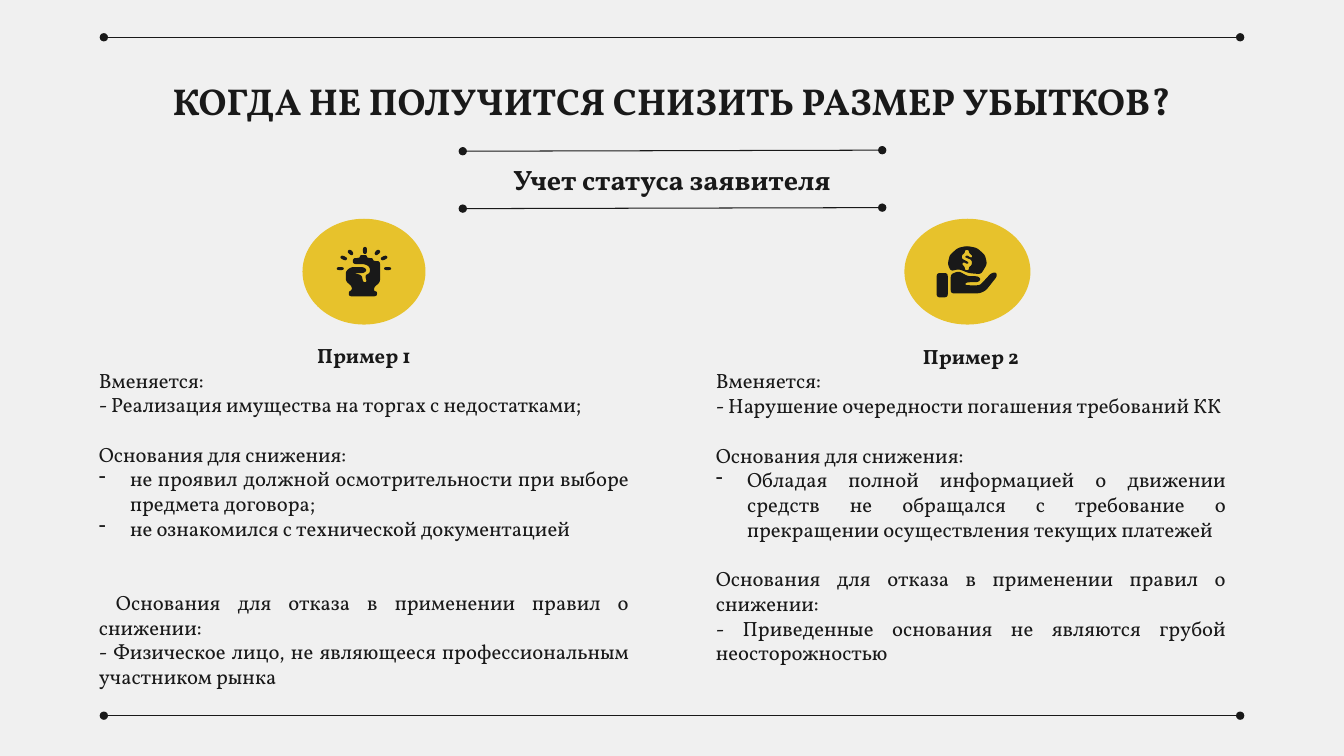
"""Build the slide on when damages cannot be reduced."""
import math
from dataclasses import dataclass

import pptx
import pptx.dml.color
import pptx.enum.shapes
import pptx.enum.text
import pptx.oxml.ns
import pptx.oxml.xmlchemy
import pptx.util

PX = 9144
ALIGN = pptx.enum.text.PP_ALIGN


@dataclass(frozen=True)
class Theme:
    paper: str = "F0F0F0"
    ink: str = "191919"
    accent: str = "E7C22C"
    font: str = "Vollkorn"
    title: float = 26.7
    heading: float = 20
    body: float = 14.7
    gap: float = 17.6
    rule: float = 0.75


def px(n):
    return pptx.util.Emu(round(n * PX))


def rgb(value):
    return pptx.dml.color.RGBColor.from_string(value)


def add_xml(parent, tag, **attrs):
    el = pptx.oxml.xmlchemy.OxmlElement(tag)
    for name, value in attrs.items():
        el.set(name, value)
    parent.append(el)


def write(p, text, theme, size, bold=False, align=ALIGN.JUSTIFY, gaps=0, first=0, bullet=False):
    p.alignment = align
    if gaps:
        p.space_before = pptx.util.Pt(gaps * theme.gap)
    pPr = p._p.get_or_add_pPr()
    if bullet:
        pPr.set("marL", str(px(31)))
        pPr.set("indent", str(px(-31)))
        add_xml(pPr, "a:buChar", char="-")
    elif first:
        pPr.set("indent", str(px(first)))
    r = p.add_run()
    r.text = text
    r.font.name, r.font.size, r.font.bold = theme.font, pptx.util.Pt(size), bold
    r.font.color.rgb = rgb(theme.ink)


def rounded(corners, radius):
    points = []
    for i, (x, y) in enumerate(corners):
        ends = []
        for nx, ny in (corners[i - 1], corners[(i + 1) % len(corners)]):
            length = math.hypot(nx - x, ny - y)
            t = min(radius / length, 0.5)
            ends.append((x + (nx - x) * t, y + (ny - y) * t))
        (ax, ay), (bx, by) = ends
        for t in (0, 0.25, 0.5, 0.75, 1):
            u = 1 - t
            points.append((u * u * ax + 2 * u * t * x + t * t * bx,
                           u * u * ay + 2 * u * t * y + t * t * by))
    return [(px(x), px(y)) for x, y in points]


class Deck:
    def __init__(self, theme):
        self.theme = theme
        self.prs = pptx.Presentation()
        self.prs.slide_width = pptx.util.Inches(13.33)
        self.prs.slide_height = pptx.util.Inches(7.5)
        self.s = self.prs.slides.add_slide(self.prs.slide_layouts[6])
        self.s.background.fill.solid()
        self.s.background.fill.fore_color.rgb = rgb(theme.paper)

    def text(self, x, y, w, h, paragraphs, inset=13, wrap=True):
        tf = self.s.shapes.add_textbox(px(x), px(y), px(w), px(h)).text_frame
        tf.word_wrap = wrap
        tf.margin_left = tf.margin_right = tf.margin_top = tf.margin_bottom = px(inset)
        for i, (text, style) in enumerate(paragraphs):
            p = tf.add_paragraph() if i else tf.paragraphs[0]
            write(p, text, self.theme, **{"size": self.theme.body, **style})

    def rule(self, x1, y1, x2, y2):
        c = self.s.shapes.add_connector(
            pptx.enum.shapes.MSO_CONNECTOR.STRAIGHT, px(x1), px(y1), px(x2), px(y2))
        c.line.color.rgb = rgb(self.theme.ink)
        c.line.width = pptx.util.Pt(self.theme.rule)
        spPr = c.element.spPr
        ln = spPr.find(pptx.oxml.ns.qn("a:ln"))
        for end in ("a:headEnd", "a:tailEnd"):
            add_xml(ln, end, type="oval")
        add_xml(spPr, "a:effectLst")

    def paint(self, sp, color):
        sp.shadow.inherit = False
        sp.fill.solid()
        sp.fill.fore_color.rgb = rgb(color)
        sp.line.fill.background()

    def disc(self, x, y, w, h):
        sp = self.s.shapes.add_shape(
            pptx.enum.shapes.MSO_SHAPE.OVAL, px(x), px(y), px(w), px(h))
        self.paint(sp, self.theme.accent)

    def outline(self, *contours, radius=3):
        builder = None
        for corners in contours:
            start, *rest = rounded(corners, radius)
            if builder is None:
                builder = self.s.shapes.build_freeform(*start, scale=1.0)
            else:
                builder.move_to(*start)
            builder.add_line_segments(rest, close=True)
        self.paint(builder.convert_to_shape(), self.theme.ink)


CUFF = [(929, 271), (940, 271), (940, 295), (929, 295)]
COIN = [(943, 269), (940, 262), (942, 253), (950, 246), (959, 244), (969, 246), (977, 253),
        (979, 262), (973, 272), (961, 271), (951, 267)]
DOLLAR = [(957, 248), (961, 248), (961, 251), (965, 254), (963, 256), (959, 253), (957, 255),
          (959, 256), (964, 258), (964, 263), (961, 265), (961, 268), (957, 268), (957, 265),
          (954, 262), (956, 260), (959, 262), (961, 261), (959, 259), (954, 257), (954, 253),
          (957, 251)]
PALM = [(943, 272), (951, 269), (960, 274), (970, 274), (973, 277), (970, 280), (959, 280),
        (957, 282), (959, 283), (972, 283), (983, 271), (988, 270), (989, 274), (978, 288),
        (972, 291), (943, 291)]
FIST = [(350, 262), (362, 262), (367, 265), (367, 271), (362, 273), (364, 280), (360, 280),
        (359, 273), (351, 271), (361, 271), (364, 268), (361, 265), (348, 265), (343, 269),
        (343, 279), (349, 284), (349, 288), (346, 289), (346, 294), (374, 294), (374, 289),
        (371, 289), (371, 285), (377, 280), (377, 259), (370, 259), (370, 256), (364, 256),
        (364, 253), (357, 253), (357, 256), (350, 256)]
TOP_RAY = [(360, 245), (364, 245), (364, 252), (360, 252)]
RIGHT_RAYS = [
    [(371, 251), (375, 247), (378, 250), (373, 254)],
    [(377, 256), (383, 253), (385, 256), (379, 259)],
    [(381, 265), (388, 265), (388, 268), (381, 268)],
]


def main():
    theme = Theme()
    deck = Deck(theme)
    head = {"bold": True, "align": ALIGN.CENTER}
    deck.text(105, 65, 1123, 102, [
        ("КОГДА НЕ ПОЛУЧИТСЯ СНИЗИТЬ РАЗМЕР УБЫТКОВ?", {**head, "size": theme.title})])
    deck.text(697, 328, 532, 363, [
        ("Пример 2", head),
        ("Вменяется:", {}),
        ("- Нарушение очередности погашения требований КК", {}),
        ("Основания для снижения:", {"gaps": 1}),
        ("Обладая полной информацией о движении средств не обращался с требование о "
         "прекращении осуществления текущих платежей", {"bullet": True}),
        ("Основания для отказа в применении правил о снижении:", {"gaps": 1}),
        ("- Приведенные основания не являются грубой неосторожностью", {}),
    ])
    deck.text(85, 327, 552, 366, [
        ("Пример 1", head),
        ("Вменяется:", {}),
        ("- Реализация имущества на торгах с недостатками;", {}),
        ("Основания для снижения:", {"gaps": 1}),
        ("не проявил должной осмотрительности при выборе предмета договора;", {"bullet": True}),
        ("не ознакомился с технической документацией", {"bullet": True}),
        ("Основания для отказа в применении правил о снижении:", {"gaps": 2, "first": 17}),
        ("- Физическое лицо, не являющееся профессиональным участником рынка", {}),
    ])
    deck.text(494, 156, 345, 44, [
        ("Учет статуса заявителя", {**head, "size": theme.heading})], inset=5, wrap=False)
    for y in (37, 710):
        deck.rule(103, y, 1230, y)
    for y in (150, 207):
        deck.rule(459, y, 875, y - 1)

    deck.disc(897, 217, 125, 105)
    deck.outline(CUFF)
    deck.outline(COIN, DOLLAR)
    deck.outline(PALM)
    deck.disc(300, 217, 122, 105)
    deck.outline(FIST)
    deck.outline(TOP_RAY)
    for ray in RIGHT_RAYS:
        deck.outline(ray)
        deck.outline([(722 - x, y) for x, y in ray])
    deck.prs.save("out.pptx")


if __name__ == "__main__":
    main()
